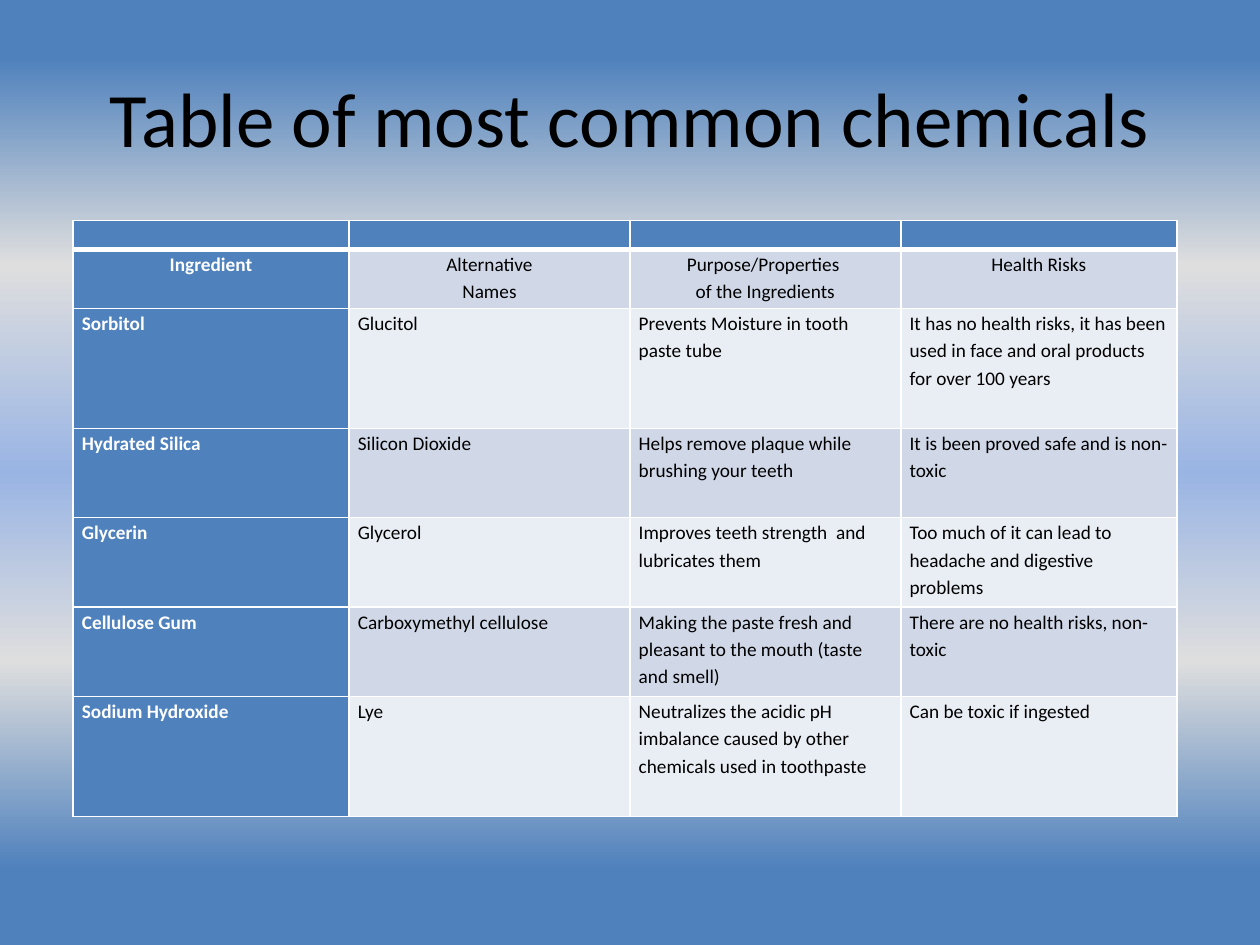
import dataclasses

import lxml.etree
import pptx
import pptx.dml.color
import pptx.enum.text
import pptx.oxml.ns
import pptx.util

ALIGN = pptx.enum.text.PP_ALIGN
ANCHOR = pptx.enum.text.MSO_ANCHOR


@dataclasses.dataclass(frozen=True)
class Theme:
    font: str = "Calibri"
    title_size: int = 44
    cell_size: int = 11
    line_spacing: float = 1.15
    dark: str = "000000"
    light: str = "FFFFFF"
    accent: str = "4F81BD"
    bands: tuple = ("D0D8E8", "E9EDF4")
    thin: int = 1
    thick: int = 3
    backdrop: tuple = ((6, "4F81BD"), (28, "DEDEDE"), (50, "9AB5E4"),
                       (70, "DEDEDE"), (92, "4F81BD"))


def rgb(color):
    return pptx.dml.color.RGBColor.from_string(color)


def add_node(parent, tag, **attributes):
    node = lxml.etree.SubElement(parent, pptx.oxml.ns.qn(tag))
    for name, value in attributes.items():
        node.set(name, str(value))
    return node


class SlideBuilder:
    """Lengths are shares of the slide's width and height."""

    def __init__(self, deck, theme):
        self.deck = deck
        self.theme = theme
        self.slide = deck.slides.add_slide(deck.slide_layouts[6])

    def area(self, left, top, width, height):
        across, down = self.deck.slide_width, self.deck.slide_height
        return (int(left * across), int(top * down),
                int(width * across), int(height * down))

    def backdrop(self):
        fill = self.slide.background.fill
        fill.gradient()
        fill.gradient_angle = 270
        stops = self.slide.element.find(".//" + pptx.oxml.ns.qn("a:gsLst"))
        for stop in list(stops):
            stops.remove(stop)
        for percent, color in self.theme.backdrop:
            stop = add_node(stops, "a:gs", pos=percent * 1000)
            add_node(stop, "a:srgbClr", val=color)

    def add_span(self, para, text, size, color, bold=False):
        span = para.add_run()
        span.text = text
        span.font.name = self.theme.font
        span.font.size = pptx.util.Pt(size)
        span.font.bold = bold
        span.font.color.rgb = rgb(color)

    def title(self, text, area):
        frame = self.slide.shapes.add_textbox(*self.area(*area)).text_frame
        frame.word_wrap = True
        frame.vertical_anchor = ANCHOR.MIDDLE
        para = frame.paragraphs[0]
        para.alignment = ALIGN.CENTER
        self.add_span(para, text, self.theme.title_size, self.theme.dark)

    def borders(self, cell, top, bottom):
        properties = cell._tc.get_or_add_tcPr()
        thin = self.theme.thin
        for side, points in zip("LRTB", (thin, thin, top, bottom)):
            line = add_node(properties, f"a:ln{side}", w=pptx.util.Pt(points))
            fill = add_node(line, "a:solidFill")
            add_node(fill, "a:srgbClr", val=self.theme.light)

    def cell(self, cell, text, row, column):
        """Row 0 is an empty coloured strip, row 1 holds the headings."""
        theme = self.theme
        self.borders(cell, theme.thick if row == 1 else theme.thin,
                     theme.thick if row == 0 else theme.thin)
        emphasised = row == 0 or column == 0
        cell.fill.solid()
        cell.fill.fore_color.rgb = rgb(
            theme.accent if emphasised else theme.bands[(row - 1) % 2])
        cell.margin_left = cell.margin_right = pptx.util.Inches(0.07)
        cell.margin_top = cell.margin_bottom = 0
        frame = cell.text_frame
        for index, line in enumerate(text.split("\n")):
            para = frame.add_paragraph() if index else frame.paragraphs[0]
            para.alignment = ALIGN.CENTER if row == 1 else ALIGN.LEFT
            para.line_spacing = theme.line_spacing
            if line:
                self.add_span(para, line, theme.cell_size,
                              theme.light if emphasised else theme.dark, emphasised)
            else:
                add_node(para._p, "a:endParaRPr", sz=theme.cell_size * 100)

    def table(self, rows, left, top, widths, heights):
        area = self.area(left, top, sum(widths), sum(heights))
        table = self.slide.shapes.add_table(len(rows), len(widths), *area).table
        table.first_row = table.horz_banding = False
        for column, width in zip(table.columns, widths):
            column.width = int(width * self.deck.slide_width)
        for row, height in zip(table.rows, heights):
            row.height = int(height * self.deck.slide_height)
        for row, texts in enumerate(rows):
            for column, text in enumerate(texts):
                self.cell(table.cell(row, column), text, row, column)


CHEMICALS = [
    ("", "", "", ""),
    ("Ingredient", "Alternative\nNames",
     "Purpose/Properties \nof the Ingredients", "Health Risks"),
    ("Sorbitol", "Glucitol", "Prevents Moisture in tooth paste tube",
     "It has no health risks, it has been used in face and oral products "
     "for over 100 years"),
    ("Hydrated Silica", "Silicon Dioxide",
     "Helps remove plaque while brushing your teeth",
     "It is been proved safe and is non-toxic"),
    ("Glycerin", "Glycerol", "Improves teeth strength  and lubricates them",
     "Too much of it can lead to headache and digestive problems"),
    ("Cellulose Gum", "Carboxymethyl cellulose",
     "Making the paste fresh and pleasant to the mouth (taste and smell)",
     "There are no health risks, non- toxic"),
    ("Sodium Hydroxide", "Lye",
     "Neutralizes the acidic pH imbalance caused by other chemicals used "
     "in toothpaste", "Can be toxic if ingested"),
]


def main():
    deck = pptx.Presentation()
    deck.slide_width = pptx.util.Inches(10)
    deck.slide_height = pptx.util.Inches(7.5)
    builder = SlideBuilder(deck, Theme())
    builder.backdrop()
    builder.title("Table of most common chemicals", (0.05, 0.04, 0.9, 1 / 6))
    heights = [inches / 7.5 for inches in (0.23, 0.47, 0.95, 0.71, 0.71, 0.71, 0.95)]
    widths = [inches / 10 for inches in (2.19, 2.23, 2.15, 2.19)]
    builder.table(CHEMICALS, 0.058, 1.75 / 7.5, widths, heights)
    deck.save("out.pptx")


if __name__ == "__main__":
    main()
